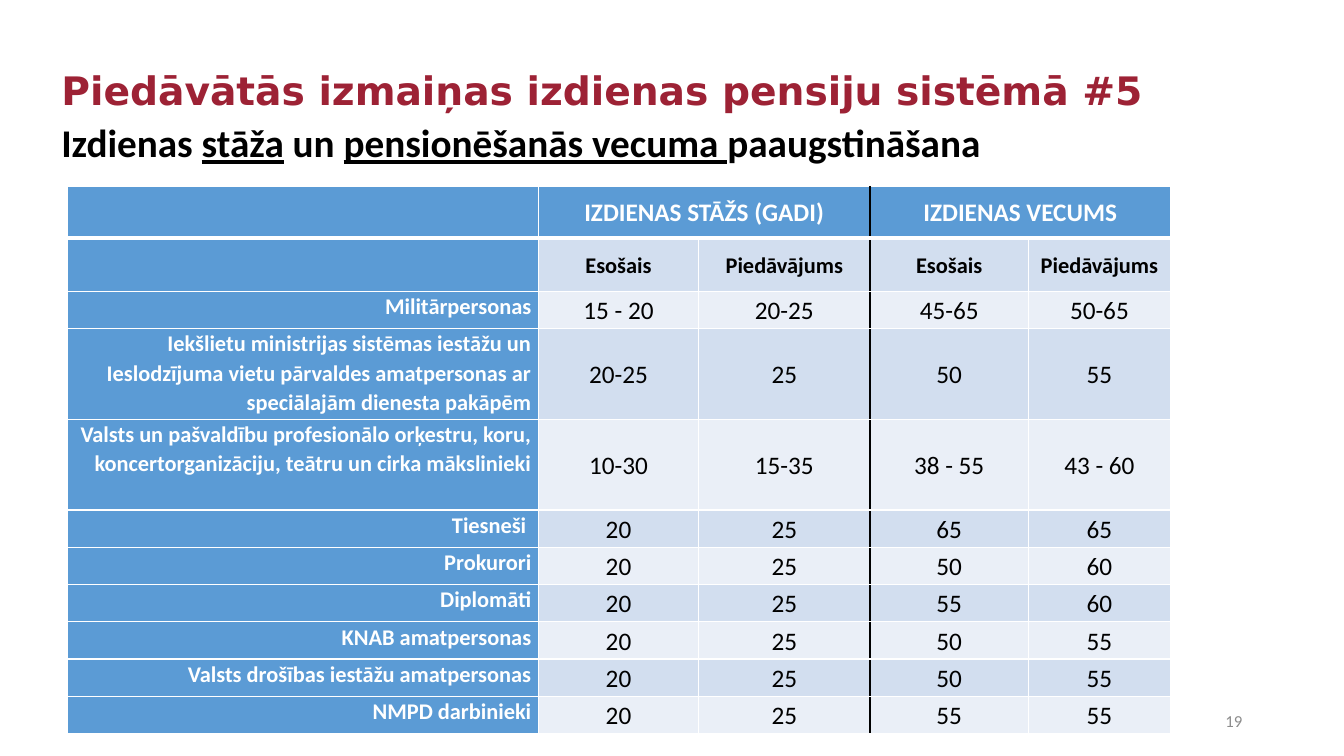
from dataclasses import dataclass

from lxml import etree
from pptx import Presentation
from pptx.dml.color import RGBColor
from pptx.enum.text import MSO_ANCHOR, MSO_AUTO_SIZE, PP_ALIGN
from pptx.oxml.ns import qn
from pptx.util import Emu, Pt

LEFT, MID, RIGHT, JUST = (PP_ALIGN.LEFT, PP_ALIGN.CENTER,
                          PP_ALIGN.RIGHT, PP_ALIGN.JUSTIFY)
TOP, CENTRE = MSO_ANCHOR.TOP, MSO_ANCHOR.MIDDLE
NO_FIT = MSO_AUTO_SIZE.NONE
TITLE_ONLY = 5
SCALE = 9144  # EMU in one px: 100 px make an inch


@dataclass(frozen=True)
class Theme:
    head: str = "DejaVu Sans"
    body: str = "Calibri"
    red: str = "9D2235"
    black: str = "000000"
    white: str = "FFFFFF"
    grey: str = "8C8C8C"
    blue: str = "5B9BD5"
    band: tuple = ("EAEFF7", "D2DEEF")
    big: int = 28
    mid: int = 18
    small: int = 16
    tiny: int = 12


THEME = Theme()

# Table content: group heads, column heads, then one row per profession
GROUPS = ("", "IZDIENAS STĀŽS (GADI)", "", "IZDIENAS VECUMS", "")
HEADS = ("", "Esošais", "Piedāvājums", "Esošais", "Piedāvājums")
JOBS = (
    ("Militārpersonas", "15 - 20", "20-25", "45-65", "50-65"),
    ("Iekšlietu ministrijas sistēmas iestāžu un Ieslodzījuma vietu pārvaldes "
     "amatpersonas ar speciālajām dienesta pakāpēm", "20-25", "25", "50", "55"),
    ("Valsts un pašvaldību profesionālo orķestru, koru, koncertorganizāciju, "
     "teātru un cirka mākslinieki", "10-30", "15-35", "38 - 55", "43 - 60"),
    ("Tiesneši ", "20", "25", "65", "65"),
    ("Prokurori", "20", "25", "50", "60"),
    ("Diplomāti", "20", "25", "55", "60"),
    ("KNAB amatpersonas", "20", "25", "50", "55"),
    ("Valsts drošības iestāžu amatpersonas", "20", "25", "50", "55"),
    ("NMPD darbinieki", "20", "25", "55", "55"),
)
ROWS = (GROUPS, HEADS) + JOBS
WIDTHS = (467, 159, 170, 157, 141)
HEIGHTS = (51, 53, 37, 90, 90) + (37,) * 6
SPLIT = 3  # first column of the age group


def px(n):
    return Emu(n * SCALE)


def rgb(code):
    return RGBColor.from_string(code)


def place(shape, x, y, w, h):
    shape.left, shape.top, shape.width, shape.height = map(px, (x, y, w, h))


def add_run(para, text, size, color, bold=False, face=THEME.body, under=False):
    run = para.add_run()
    run.text = text
    font = run.font
    font.name, font.size, font.bold = face, Pt(size), bold
    font.underline = under
    font.color.rgb = rgb(color)


def set_para(para, align, line=1.0, before=0, after=0):
    para.alignment, para.line_spacing = align, line
    para.space_before, para.space_after = Pt(before), Pt(after)
    return para


def add_title(slide, text):
    shape = slide.shapes.title
    place(shape, 51, 40, 1191, 145)
    frame = shape.text_frame
    frame.word_wrap, frame.auto_size = True, NO_FIT
    frame.vertical_anchor, frame.margin_top = TOP, px(31)
    para = set_para(frame.paragraphs[0], LEFT, 0.9)
    add_run(para, text, THEME.big, THEME.red, True, THEME.head)


def add_box(slide, x, y, w, h, anchor=TOP):
    frame = slide.shapes.add_textbox(*map(px, (x, y, w, h))).text_frame
    frame.word_wrap, frame.vertical_anchor = True, anchor
    return frame.paragraphs[0]


def set_edges(cell, edges):
    """Draw the four cell borders; edges maps L, R, T, B to (color, points)."""
    props = cell._tc.get_or_add_tcPr()
    for spot, side in enumerate("LRTB"):
        color, width = edges[side]
        line = etree.Element(qn("a:ln" + side), w=str(Pt(width)))
        fill = etree.SubElement(line, qn("a:solidFill"))
        etree.SubElement(fill, qn("a:srgbClr"), val=color)
        props.insert(spot, line)


def edge_map(row, col):
    edges = dict.fromkeys("LRTB", (THEME.white, 1))
    if row < 2:
        edges["B" if row == 0 else "T"] = (THEME.white, 3)
    if col == SPLIT:
        edges["L"] = (THEME.black, 1)
    if col == SPLIT - 1 or (row == 0 and col == SPLIT - 2):
        edges["R"] = (THEME.black, 1)
    return edges


def cell_style(row, col):
    """Give alignment, anchor, size, text color, bold and fill of a cell."""
    if col == 0:
        return RIGHT, TOP, THEME.small, THEME.white, True, THEME.blue
    if row == 0:
        return MID, CENTRE, THEME.mid, THEME.white, True, THEME.blue
    size = THEME.small if row == 1 else THEME.mid
    return MID, CENTRE, size, THEME.black, row == 1, THEME.band[row % 2]


def fill_cell(cell, row, col, text):
    align, anchor, size, color, bold, fill = cell_style(row, col)
    cell.fill.solid()
    cell.fill.fore_color.rgb = rgb(fill)
    cell.margin_left = cell.margin_right = px(7)
    cell.margin_top = cell.margin_bottom = 0
    cell.vertical_anchor = anchor
    set_edges(cell, edge_map(row, col))
    if text:
        para = set_para(cell.text_frame.paragraphs[0], align, 1.07, after=8)
        add_run(para, text, size, color, bold)


def add_grid(slide, x, y):
    size = (sum(WIDTHS), sum(HEIGHTS))
    table = slide.shapes.add_table(len(ROWS), len(WIDTHS),
                                   *map(px, (x, y, *size))).table
    table.first_row = table.horz_banding = False
    for col, width in zip(table.columns, WIDTHS):
        col.width = px(width)
    for row, height in zip(table.rows, HEIGHTS):
        row.height = px(height)
    for first in (1, SPLIT):
        table.cell(0, first).merge(table.cell(0, first + 1))
    for r, texts in enumerate(ROWS):
        for c, text in enumerate(texts):
            fill_cell(table.cell(r, c), r, c, text)


def main():
    deck = Presentation()
    deck.slide_width, deck.slide_height = px(1333), px(750)
    slide = deck.slides.add_slide(deck.slide_layouts[TITLE_ONLY])

    # Title and subtitle
    add_title(slide, "Piedāvātās izmaiņas izdienas pensiju sistēmā #5")
    para = set_para(add_box(slide, 51, 118, 1150, 82), JUST, 0.9, before=10)
    for text, under in (("Izdienas ", False), ("stāža", True), (" un ", False),
                        ("pensionēšanās vecuma ", True),
                        ("paaugstināšana", False)):
        add_run(para, text, THEME.big, THEME.black, True, under=under)

    # Page number
    para = set_para(add_box(slide, 942, 695, 300, 40, CENTRE), RIGHT)
    add_run(para, "19", THEME.tiny, THEME.grey)

    # Service years and ages
    add_grid(slide, 67, 185)
    deck.save("out.pptx")


if __name__ == "__main__":
    main()
